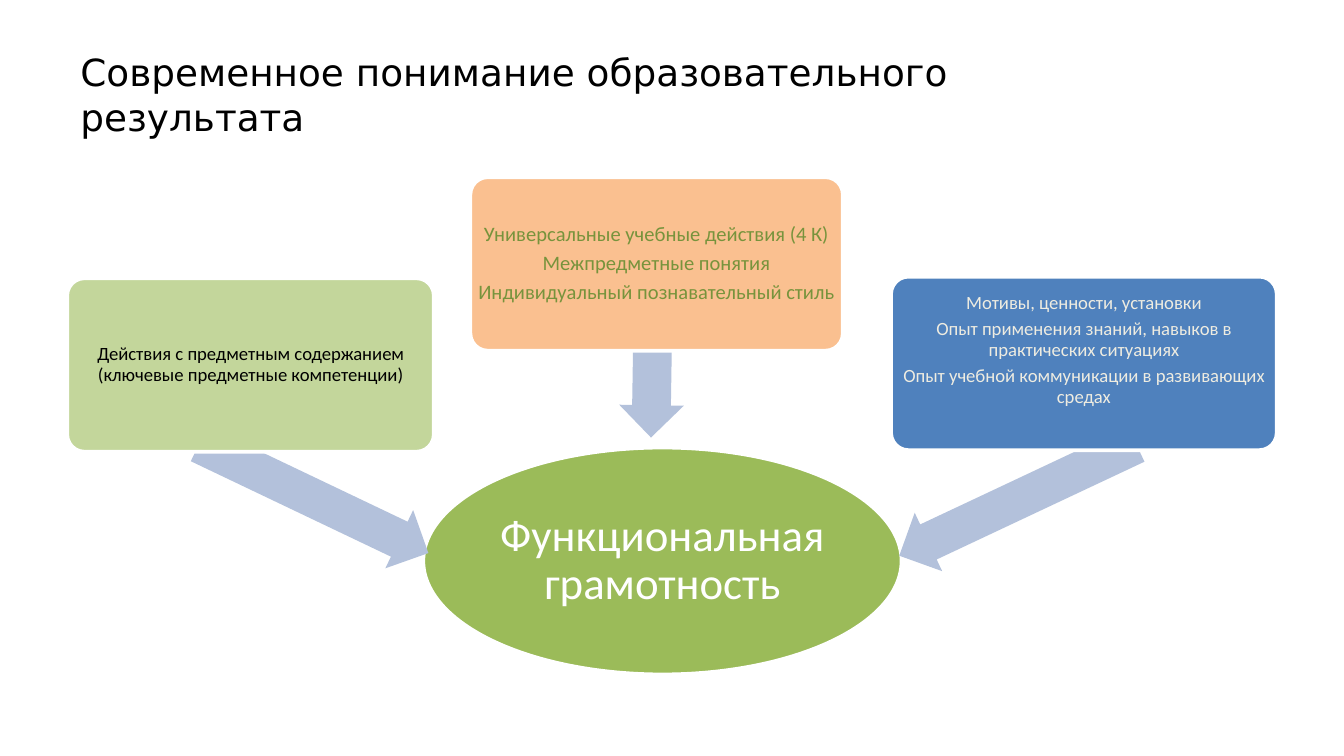
"""Build a slide on three educational results that form functional literacy."""
from pptx import Presentation
from pptx.dml.color import RGBColor
from pptx.enum.shapes import MSO_SHAPE
from pptx.enum.text import MSO_ANCHOR, PP_ALIGN
from pptx.util import Cm, Pt

BLACK = RGBColor(0x00, 0x00, 0x00)
WHITE = RGBColor(0xFF, 0xFF, 0xFF)
CREAM = RGBColor(0xEE, 0xEC, 0xE1)
GREEN = RGBColor(0x9B, 0xBB, 0x59)
PALE_GREEN = RGBColor(0xC3, 0xD6, 0x9B)
DARK_GREEN = RGBColor(0x77, 0x93, 0x3C)
ORANGE = RGBColor(0xFA, 0xC0, 0x90)
BLUE = RGBColor(0x4F, 0x81, 0xBD)
PALE_BLUE = RGBColor(0xB3, 0xC1, 0xDB)


class ResultSlide:
    title_font = "DejaVu Sans"
    body_font = "Calibri"
    card_height = 3.28
    arrow_height = 1.22

    def __init__(self, presentation):
        self.slide = presentation.slides.add_slide(presentation.slide_layouts[6])

    def set_font(self, paragraph, name, size, color):
        paragraph.font.name = name
        paragraph.font.size = Pt(size)
        paragraph.font.color.rgb = color

    def title(self, text, left, top, width, height):
        heading = self.slide.shapes.add_textbox(Cm(left), Cm(top), Cm(width), Cm(height))
        frame = heading.text_frame
        frame.word_wrap = True
        frame.vertical_anchor = MSO_ANCHOR.MIDDLE
        frame.text = text
        self.set_font(frame.paragraphs[0], self.title_font, 20, BLACK)

    def shape(self, kind, left, top, width, height, fill):
        figure = self.slide.shapes.add_shape(kind, Cm(left), Cm(top), Cm(width), Cm(height))
        figure.shadow.inherit = False
        figure.fill.solid()
        figure.fill.fore_color.rgb = fill
        return figure

    def outline(self, figure):
        figure.line.color.rgb = WHITE
        figure.line.width = Pt(2)

    def label(self, figure, lines, size, color, bottom=0):
        frame = figure.text_frame
        frame.word_wrap = True
        frame.vertical_anchor = MSO_ANCHOR.MIDDLE
        frame.margin_left = frame.margin_right = frame.margin_top = 0
        frame.margin_bottom = Cm(bottom)
        frame.text = "\n".join(lines)
        for paragraph in frame.paragraphs:
            paragraph.alignment = PP_ALIGN.CENTER
            paragraph.line_spacing = 0.9
            paragraph.space_after = Pt(size * 0.35)
            self.set_font(paragraph, self.body_font, size, color)

    def goal(self, text, left, top, width, height):
        ellipse = self.shape(MSO_SHAPE.OVAL, left, top, width, height, GREEN)
        self.outline(ellipse)
        self.label(ellipse, [text], 24, WHITE)

    def arrow(self, left, top, width, rotation):
        pointer = self.shape(MSO_SHAPE.LEFT_ARROW, left, top, width, self.arrow_height, PALE_BLUE)
        pointer.adjustments[0] = 0.6
        pointer.adjustments[1] = 0.5
        pointer.rotation = rotation
        pointer.line.fill.background()

    def card(self, lines, left, top, width, fill, size, color, bottom=0):
        card = self.shape(MSO_SHAPE.ROUNDED_RECTANGLE, left, top, width, self.card_height, fill)
        card.adjustments[0] = 0.1
        self.outline(card)
        self.label(card, lines, size, color, bottom)


def main():
    presentation = Presentation()
    presentation.slide_width = Cm(25.4)
    presentation.slide_height = Cm(14.29)

    results = ResultSlide(presentation)
    results.title("Современное понимание образовательного результата", 1.27, 0.58, 18.57, 2.39)
    results.goal("Функциональная грамотность", 8, 8.46, 9.04, 4.29)

    results.arrow(3.53, 8.81, 4.8, 205.5)
    subject = ["Действия с предметным содержанием (ключевые предметные компетенции)"]
    results.card(subject, 1.27, 5.26, 6.93, PALE_GREEN, 10, BLACK)

    results.arrow(10.69, 6.02, 3.28, 270.9)
    universal = [
        "Универсальные учебные действия (4 К)",
        "Межпредметные понятия",
        "Индивидуальный познавательный стиль",
    ]
    results.card(universal, 8.89, 3.35, 7.04, ORANGE, 11, DARK_GREEN)

    results.arrow(16.76, 8.84, 4.95, 334.8)
    personal = [
        "Мотивы, ценности, установки",
        "Опыт применения знаний, навыков в практических ситуациях",
        "Опыт учебной коммуникации в развивающих средах",
    ]
    results.card(personal, 16.84, 5.23, 7.29, BLUE, 10, CREAM, bottom=0.5)

    presentation.save("out.pptx")


if __name__ == "__main__":
    main()
